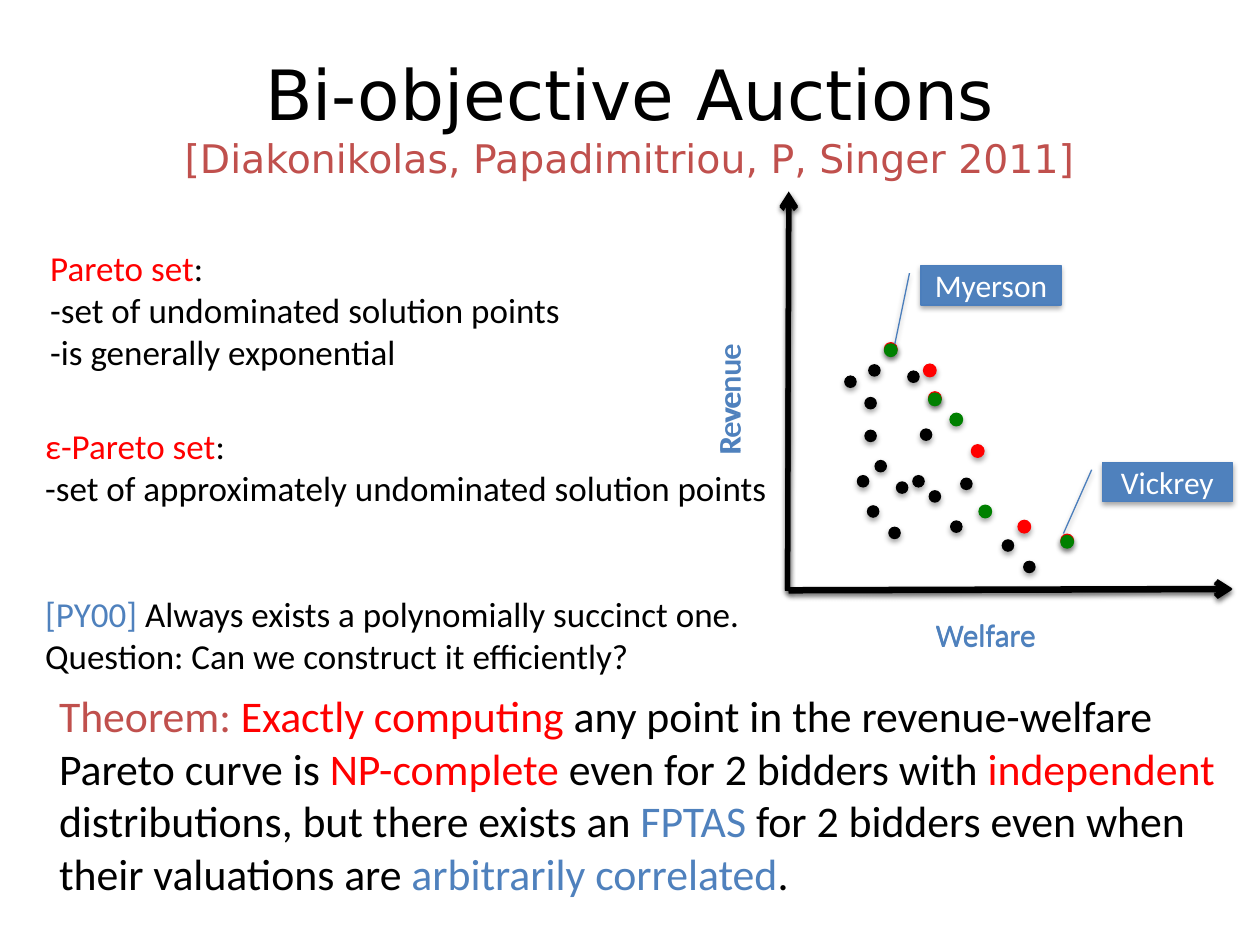
from lxml.etree import SubElement
from pptx import Presentation
from pptx.dml.color import RGBColor
from pptx.enum.shapes import MSO_CONNECTOR, MSO_SHAPE
from pptx.enum.text import MSO_ANCHOR, PP_ALIGN
from pptx.oxml.ns import qn
from pptx.util import Inches, Pt

BLACK, WHITE, RED, GREEN = "000000", "FFFFFF", "FF0000", "008000"
BLUE, BLUE_EDGE, BRICK = "4F81BD", "4B7EBC", "C0504D"


def color(hex_code):
    return RGBColor.from_string(hex_code)


def write(frame, paragraphs, size=20, font="Calibri", align=PP_ALIGN.LEFT, gap=0):
    """Fill a frame; each paragraph is a list of (text, hex colour[, size])."""
    for index, pieces in enumerate(paragraphs):
        para = frame.paragraphs[0] if index == 0 else frame.add_paragraph()
        para.alignment = align
        if index:
            para.space_before = Pt(gap)
        for text, ink, *own_size in pieces:
            for number, line in enumerate(text.split("\n")):
                if number:
                    para.add_line_break()
                if line:
                    span = para.add_run()
                    span.text = line
                    span.font.name = font
                    span.font.size = Pt(own_size[0] if own_size else size)
                    span.font.color.rgb = color(ink)


class SlideBuilder:
    dot_size = 0.1

    def __init__(self, slide):
        self.shapes = slide.shapes

    def shadow(self, properties, opacity, distance):
        effects = properties.find(qn("a:effectLst"))
        if effects is None:
            effects = SubElement(properties, qn("a:effectLst"))
        outer = SubElement(effects, qn("a:outerShdw"), blurRad=str(Pt(3.1)),
                           dist=str(Pt(distance)), dir="5400000", rotWithShape="0")
        ink = SubElement(outer, qn("a:srgbClr"), val=BLACK)
        SubElement(ink, qn("a:alpha"), val=str(opacity * 1000))

    def text(self, place, paragraphs, wrap=True, anchor=MSO_ANCHOR.TOP,
             vertical=False, **style):
        box = self.shapes.add_textbox(*map(Inches, place))
        frame = box.text_frame
        frame.word_wrap = wrap
        frame.vertical_anchor = anchor
        if vertical:
            frame._txBody.bodyPr.set("vert", "vert270")
        write(frame, paragraphs, **style)

    def shape(self, kind, place, fill, edge=None):
        shape = self.shapes.add_shape(kind, *map(Inches, place))
        shape.fill.solid()
        shape.fill.fore_color.rgb = color(fill)
        if edge:
            shape.line.color.rgb = color(edge)
            shape.line.width = Pt(0.75)
        else:
            shape.line.fill.background()
        shape.shadow.inherit = False
        self.shadow(shape._element.spPr, 35, 1.8)
        return shape

    def dots(self, points, ink):
        for left, top in points:
            self.shape(MSO_SHAPE.OVAL, (left, top, self.dot_size, self.dot_size),
                       ink, None if ink == BLACK else ink)

    def callout(self, place, label, adjustments):
        shape = self.shape(MSO_SHAPE.LINE_CALLOUT_1, place, BLUE, BLUE_EDGE)
        for index, value in enumerate(adjustments):
            shape.adjustments[index] = value
        shape.text_frame.vertical_anchor = MSO_ANCHOR.MIDDLE
        write(shape.text_frame, [[(label, WHITE)]], size=18, align=PP_ALIGN.CENTER)

    def axis(self, start, end):
        line = self.shapes.add_connector(MSO_CONNECTOR.STRAIGHT,
                                         *map(Inches, start + end))
        line.line.color.rgb = color(BLACK)
        line.line.width = Pt(3)
        SubElement(line.line._get_or_add_ln(), qn("a:tailEnd"), type="arrow")
        self.shadow(line._element.spPr, 38, 1.6)

    def axes(self, lift):
        self.axis((6.26, 4.69 - lift), (9.78, 4.68 - lift))
        self.axis((6.25, 4.69 - lift), (6.26, 1.53 - lift))
        self.text((7.33, 4.84 - lift, 1.16, 0.4), [[("Welfare", BLUE)]], size=18)
        self.text((5.58, 2.62 - lift, 0.5, 1.09), [[("Revenue", BLUE)]], size=18,
                  vertical=True)


def main():
    deck = Presentation()
    deck.slide_width, deck.slide_height = Inches(10), Inches(7.5)
    page = SlideBuilder(deck.slides.add_slide(deck.slide_layouts[6]))

    # Title
    page.text((0.5, 0.3, 9, 1.25),
              [[("Bi-objective Auctions\n", BLACK, 39.6),
                ("[Diakonikolas, Papadimitriou, P, Singer 2011]", BRICK, 22.5)]],
              font="DejaVu Sans", align=PP_ALIGN.CENTER, anchor=MSO_ANCHOR.MIDDLE)

    # Solution points: the green ones keep a red rim from the Pareto set below
    inner = [(6.7, 2.98), (6.86, 3.41), (6.86, 3.15), (7.3, 3.4), (6.94, 3.65),
             (7.62, 3.79), (7.37, 3.89), (7.11, 3.82), (7.54, 4.13), (6.8, 3.77),
             (7.24, 3.77), (6.88, 4.01), (7.05, 4.18), (7.2, 2.94), (6.89, 2.89),
             (7.95, 4.28), (8.12, 4.45)]
    pareto = [(7.37, 3.11), (7.02, 2.72), (8.42, 4.24),
              (7.71, 3.53), (8.08, 4.13), (7.33, 2.89)]
    approximate = [(7.37, 3.12), (7.54, 3.28), (7.77, 4.01), (7.02, 2.73), (8.42, 4.25)]
    page.dots(pareto, RED)

    # Named auctions
    page.callout((8.75, 3.67, 1.03, 0.31), "Vickrey", (0.188, -0.083, 1.823, -0.301))
    page.callout((7.31, 2.11, 1.11, 0.31), "Myerson", (0.188, -0.083, 2.006, -0.188))

    # Axes and their labels, doubled with a slight lift for a heavier look
    page.axes(0)
    page.dots(inner, BLACK)
    page.dots(approximate, GREEN)
    page.axes(0.01)

    # Definitions
    page.text((0.3, 1.91, 4.57, 2.46),
              [[("Pareto set", RED),
                (":\n-set of undominated solution points\n"
                 "-is generally exponential", BLACK)]])
    page.text((0.26, 3.32, 5.97, 2.12),
              [[("ε-Pareto set", RED),
                (":\n-set of approximately undominated solution points", BLACK)],
               [("[PY00] ", BLUE),
                ("Always exists a polynomially succinct one.\n"
                 "Question: Can we construct it efficiently?", BLACK)]],
              wrap=False, gap=48)

    # Theorem
    page.text((0.37, 5.42, 9.41, 1.78),
              [[("Theorem: ", BRICK), ("Exactly computing ", RED),
                ("any point in the revenue-welfare Pareto curve is ", BLACK),
                ("NP-complete ", RED), ("even for 2 bidders with ", BLACK),
                ("independent ", RED),
                ("distributions, but there exists an ", BLACK), ("FPTAS ", BLUE),
                ("for 2 bidders even when their valuations are ", BLACK),
                ("arbitrarily correlated", BLUE), (".", BLACK)]],
              size=25)

    deck.save("out.pptx")


if __name__ == "__main__":
    main()
